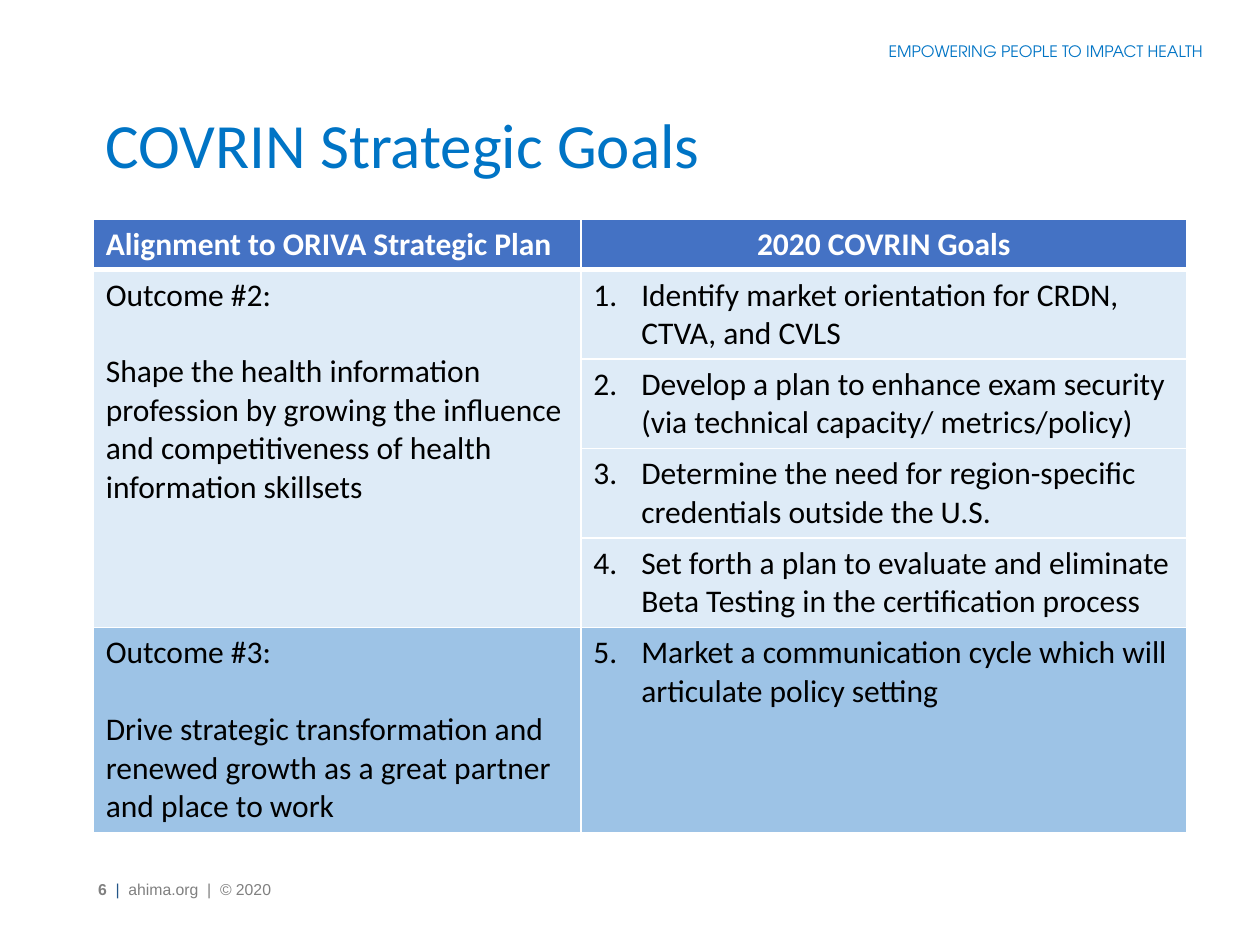
import pptx
import pptx.dml.color
import pptx.enum.text
import pptx.oxml
import pptx.oxml.ns
import pptx.util
from pptx.util import Inches

ALIGN = pptx.enum.text.PP_ALIGN
ANCHOR = pptx.enum.text.MSO_ANCHOR
BLUE, GRAY, WHITE, BLACK = "0074C5", "808080", "FFFFFF", "000000"
HEADER_FILL, LIGHT_FILL, MEDIUM_FILL = "4472C4", "DEEBF7", "9DC3E6"

HEADINGS = ["Alignment to ORIVA Strategic Plan", "2020 COVRIN Goals"]
OUTCOMES = [
    {
        "fill": LIGHT_FILL,
        "texts": [
            "Outcome #2:",
            "Shape the health information profession by growing the influence "
            "and competitiveness of health information skillsets",
        ],
        "goals": [
            "Identify market orientation for CRDN, CTVA, and CVLS",
            "Develop a plan to enhance exam security (via technical capacity/ metrics/policy)",
            "Determine the need for region-specific credentials outside the U.S.",
            "Set forth a plan to evaluate and eliminate Beta Testing in the certification process",
        ],
    },
    {
        "fill": MEDIUM_FILL,
        "texts": [
            "Outcome #3:",
            "Drive strategic transformation and renewed growth as a great partner "
            "and place to work",
        ],
        "goals": ["Market a communication cycle which will articulate policy setting"],
    },
]


def rgb(value):
    """Return the colour for a hex string."""
    return pptx.dml.color.RGBColor.from_string(value)


def set_attributes(target, values):
    """Set every attribute named in a dict of format values."""
    for name, value in values.items():
        setattr(target, name, value)


def add_run(paragraph, text, font_name, size, color, bold=False):
    """Add one formatted run to a paragraph."""
    run = paragraph.add_run()
    run.text = text
    set_attributes(run.font, {"name": font_name, "size": pptx.util.Pt(size), "bold": bold})
    run.font.color.rgb = rgb(color)


def add_text_box(slide, box, wrap=True):
    """Add a text box and return its first paragraph."""
    frame = slide.shapes.add_textbox(*map(Inches, box)).text_frame
    frame.word_wrap = wrap
    return frame.paragraphs[0]


def add_tagline(slide, box):
    """Place the tagline at the top right."""
    paragraph = add_text_box(slide, box)
    paragraph.alignment = ALIGN.RIGHT
    add_run(paragraph, "EMPOWERING PEOPLE TO IMPACT HEALTH", "TeX Gyre Adventor", 9, BLUE)


def add_title(slide, box):
    """Move and fill the title placeholder."""
    title = slide.shapes.title
    set_attributes(title, dict(zip(("left", "top", "width", "height"), map(Inches, box))))
    set_attributes(title.text_frame, {"vertical_anchor": ANCHOR.MIDDLE, "word_wrap": True})
    paragraph = title.text_frame.paragraphs[0]
    set_attributes(paragraph, {"alignment": ALIGN.LEFT, "line_spacing": 0.9})
    add_run(paragraph, "COVRIN Strategic Goals", "Calibri", 36, BLUE)


def add_footer(slide, box):
    """Place the page number, site and copyright line."""
    paragraph = add_text_box(slide, box)
    add_run(paragraph, "6 ", "Arial", 9, GRAY, True)
    add_run(paragraph, " |  ", "Arial", 9, "235588")
    add_run(paragraph, "ahima.org  |  © 2020", "Arial", 9, GRAY)


def format_cell(cell, fill, bottom_width=1):
    """Give a cell its white borders and its fill."""
    properties = cell._tc.get_or_add_tcPr()
    for side in "LRTB":
        width = pptx.util.Pt(bottom_width if side == "B" else 1)
        properties.append(pptx.oxml.parse_xml(
            f'<a:ln{side} {pptx.oxml.ns.nsdecls("a")} w="{width}"><a:solidFill>'
            f'<a:srgbClr val="{WHITE}"/></a:solidFill></a:ln{side}>'
        ))
    cell.fill.solid()
    cell.fill.fore_color.rgb = rgb(fill)


def number_paragraph(paragraph, number):
    """Give a paragraph a hanging automatic number."""
    properties = paragraph._p.get_or_add_pPr()
    properties.set("marL", str(Inches(0.38)))
    properties.set("indent", str(-Inches(0.38)))
    properties.append(pptx.oxml.parse_xml(
        f'<a:buAutoNum {pptx.oxml.ns.nsdecls("a")} type="arabicPeriod" startAt="{number}"/>'
    ))


def write_outcome(cell, texts):
    """Write an outcome's name and, a line lower, its description."""
    frame = cell.text_frame
    name, description = frame.paragraphs[0], frame.add_paragraph()
    description.space_before = pptx.util.Pt(22)
    for paragraph, text in zip((name, description), texts):
        add_run(paragraph, text, "Calibri", 18, BLACK)


def add_goals_table(slide, box):
    """Place the table that aligns goals with outcomes."""
    row_heights = [0.4, 0.71, 0.71, 0.71, 0.71, 1.63]
    table = slide.shapes.add_table(len(row_heights), 2, *map(Inches, box)).table
    for row, height in zip(table.rows, row_heights):
        row.height = Inches(height)
    for column, width in zip(table.columns, (3.87, box[2] - 3.87)):
        column.width = Inches(width)

    for index, (heading, alignment) in enumerate(zip(HEADINGS, (ALIGN.LEFT, ALIGN.CENTER))):
        cell = table.cell(0, index)
        format_cell(cell, HEADER_FILL, 3)
        paragraph = cell.text_frame.paragraphs[0]
        paragraph.alignment = alignment
        add_run(paragraph, heading, "Calibri", 18, WHITE, True)

    number = 1
    for outcome in OUTCOMES:
        first = number
        for goal in outcome["goals"]:
            for column in range(2):
                format_cell(table.cell(number, column), outcome["fill"])
            paragraph = table.cell(number, 1).text_frame.paragraphs[0]
            number_paragraph(paragraph, number)
            add_run(paragraph, goal, "Calibri", 18, BLACK)
            number += 1
        if number - first > 1:
            table.cell(first, 0).merge(table.cell(number - 1, 0))
        write_outcome(table.cell(first, 0), outcome["texts"])


def main():
    """Build and save the presentation."""
    presentation = pptx.Presentation()
    set_attributes(presentation, {"slide_width": Inches(10), "slide_height": Inches(7.5)})
    slide = presentation.slides.add_slide(presentation.slide_layouts[5])
    add_tagline(slide, (5.62, 0.28, 4.02, 0.25))
    add_title(slide, (0.74, 0.7, 8.7, 0.95))
    add_footer(slide, (0.68, 6.93, 2.23, 0.34))
    add_goals_table(slide, (0.74, 1.74, 8.68, 4.87))
    presentation.save("out.pptx")


if __name__ == "__main__":
    main()
